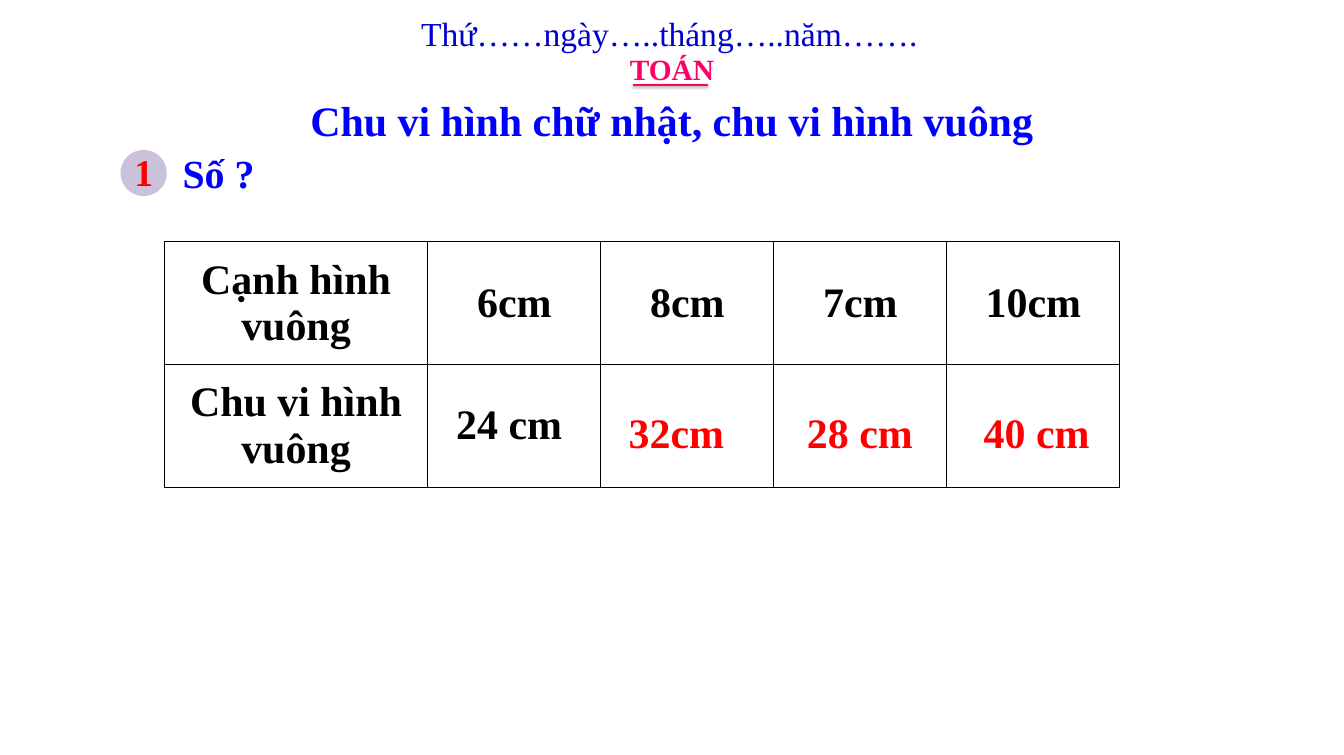
from lxml import etree
from pptx import Presentation
from pptx.dml.color import RGBColor
from pptx.enum.shapes import MSO_CONNECTOR, MSO_SHAPE
from pptx.enum.text import MSO_ANCHOR, PP_ALIGN
from pptx.oxml import parse_xml
from pptx.oxml.ns import nsdecls, qn
from pptx.util import Pt

LEFT, CENTER = PP_ALIGN.LEFT, PP_ALIGN.CENTER
MIDDLE = MSO_ANCHOR.MIDDLE
STRAIGHT, OVAL = MSO_CONNECTOR.STRAIGHT, MSO_SHAPE.OVAL
TITLE_ONLY = 5
COLORS = {"navy": "0000CC", "pink": "FF0066", "blue": "0000FF",
          "red": "FF0000", "lilac": "CCC1DA", "black": "000000"}
HEADER_ROW = ["Cạnh hình vuông", "6cm", "8cm", "7cm", "10cm"]
PERIMETER_ROW = ["Chu vi hình vuông", "24 cm ", "", "", ""]
ANSWERS = [("32cm", 645, 106.5), ("28 cm", 820, 116.5), ("40 cm", 988.5, 116.5)]


class WorksheetSlide:
    """Holds the style and the current slide, and draws each kind of element."""

    font_name = "Times New Roman"

    def __init__(self, presentation):
        self.slide = presentation.slides.add_slide(presentation.slide_layouts[TITLE_ONLY])

    def color(self, name):
        return RGBColor.from_string(COLORS[name])

    def fill_text(self, text_frame, text, size, color, bold=True, align=CENTER):
        paragraph = text_frame.paragraphs[0]
        paragraph.alignment = align
        run = paragraph.add_run()
        run.text = text
        values = {"name": self.font_name, "size": Pt(size), "bold": bold}
        for attribute, value in values.items():
            setattr(run.font, attribute, value)
        run.font.color.rgb = self.color(color)

    def title(self, text, left, top, width, height, size, color):
        shape = self.slide.shapes.title
        places = {"left": left, "top": top, "width": width, "height": height}
        for attribute, value in places.items():
            setattr(shape, attribute, Pt(value))
        shape.text_frame.vertical_anchor = MIDDLE
        self.fill_text(shape.text_frame, text, size, color)

    def label(self, text, left, top, width, height, size, color, bold=True, align=LEFT):
        box = self.slide.shapes.add_textbox(Pt(left), Pt(top), Pt(width), Pt(height))
        box.text_frame.word_wrap = False
        self.fill_text(box.text_frame, text, size, color, bold, align)

    def circle(self, left, top, diameter, color):
        shape = self.slide.shapes.add_shape(OVAL, Pt(left), Pt(top), Pt(diameter), Pt(diameter))
        shape.shadow.inherit = False
        shape.fill.solid()
        shape.fill.fore_color.rgb = self.color(color)
        shape.line.color.rgb = self.color(color)
        shape.line.width = Pt(2)

    def underline(self, left, top, width, color):
        line = self.slide.shapes.add_connector(
            STRAIGHT, Pt(left), Pt(top), Pt(left + width), Pt(top))
        line.line.color.rgb = self.color(color)
        line.line.width = Pt(2)
        line._element.spPr.append(parse_xml(
            f'<a:effectLst {nsdecls("a")}><a:outerShdw blurRad="{Pt(3.1)}" dist="{Pt(1.6)}" '
            f'dir="5400000"><a:srgbClr val="{COLORS["black"]}"><a:alpha val="38000"/>'
            '</a:srgbClr></a:outerShdw></a:effectLst>'))

    def cell_borders(self, cell, color):
        properties = cell._tc.get_or_add_tcPr()
        for position, side in enumerate(("lnL", "lnR", "lnT", "lnB")):
            border = etree.Element(qn(f"a:{side}"), w=str(Pt(1)))
            fill = etree.SubElement(border, qn("a:solidFill"))
            etree.SubElement(fill, qn("a:srgbClr"), val=COLORS[color])
            properties.insert(position, border)

    def table(self, rows, left, top, column_widths, row_height, size, color):
        table = self.slide.shapes.add_table(
            len(rows), len(column_widths), Pt(left), Pt(top),
            Pt(sum(column_widths)), Pt(row_height * len(rows))).table
        table.first_row = table.horz_banding = False
        for column, width in zip(table.columns, column_widths):
            column.width = Pt(width)
        for row, texts in zip(table.rows, rows):
            row.height = Pt(row_height)
            for cell, text in zip(row.cells, texts):
                cell.fill.background()
                cell.vertical_anchor = MIDDLE
                self.cell_borders(cell, color)
                if text:
                    self.fill_text(cell.text_frame, text, size, color)


def main():
    presentation = Presentation()
    presentation.slide_width, presentation.slide_height = Pt(1281.6), Pt(720)
    worksheet = WorksheetSlide(presentation)
    worksheet.label("Thứ……ngày…..tháng…..năm…….", 394.5, 8.5, 492.5, 46, 32, "navy", bold=False)
    worksheet.label("TOÁN", 593.5, 45.5, 95.5, 41, 28, "pink")
    worksheet.underline(603.5, 81, 72, "pink")
    worksheet.circle(116, 144, 42, "lilac")
    worksheet.label("1", 121, 138, 32.5, 51, 36, "red")
    worksheet.label("Số ?", 167, 138, 83.5, 53, 38, "blue")
    worksheet.table([HEADER_ROW, PERIMETER_ROW], 156.5, 230.5, [251.5] + [165] * 4, 117, 40, "black")
    worksheet.title("Chu vi hình chữ nhật, chu vi hình vuông", 232.5, 80.5, 816, 67, 40, "blue")
    for text, middle, width in ANSWERS:
        worksheet.label(text, middle - width / 2, 384, width, 55.5, 40, "red", align=CENTER)
    presentation.save("out.pptx")


if __name__ == "__main__":
    main()
